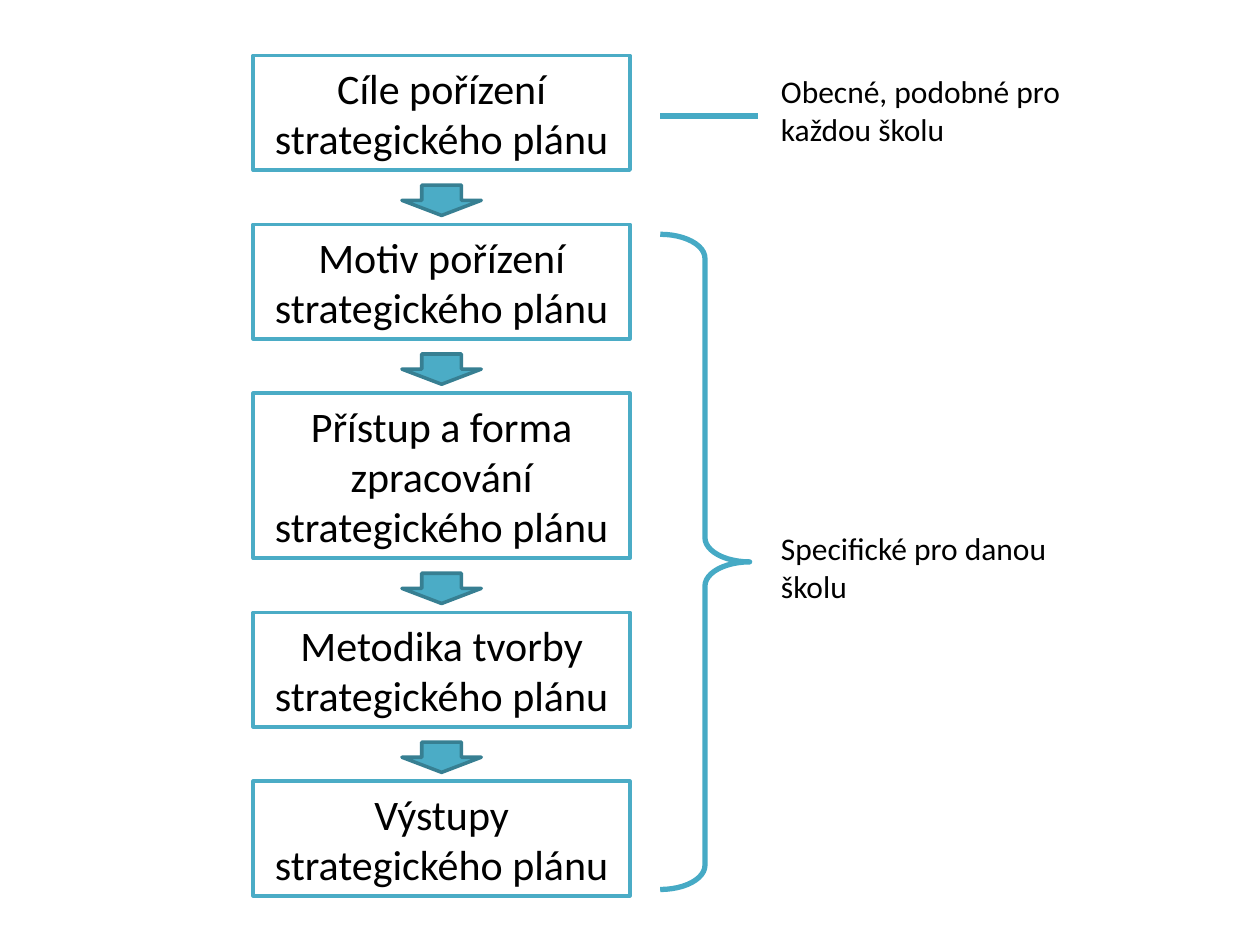
from dataclasses import dataclass

from lxml.etree import SubElement
from pptx import Presentation
from pptx.dml.color import RGBColor
from pptx.enum.shapes import MSO_CONNECTOR as Connector, MSO_SHAPE as Preset
from pptx.enum.text import MSO_ANCHOR as Anchor, MSO_AUTO_SIZE as AutoSize, PP_ALIGN as Align
from pptx.oxml.ns import qn
from pptx.util import Inches, Pt


@dataclass(frozen=True)
class Theme:
    font: str = "Calibri"
    text: RGBColor = RGBColor(0x00, 0x00, 0x00)
    box_fill: RGBColor = RGBColor(0xFF, 0xFF, 0xFF)
    accent: RGBColor = RGBColor(0x4B, 0xAC, 0xC6)
    arrow_edge: RGBColor = RGBColor(0x37, 0x7F, 0x92)
    marker: RGBColor = RGBColor(0x46, 0xAA, 0xC5)
    step_size: int = 24
    note_size: int = 18
    edge_width: int = 2
    marker_width: int = 3


@dataclass(frozen=True)
class Step:
    text: str
    height: float = 0.91


@dataclass(frozen=True)
class Note:
    text: str
    top: float


THEME = Theme()
STEPS = [
    Step("Cíle pořízení strategického plánu"),
    Step("Motiv pořízení strategického plánu"),
    Step("Přístup a forma zpracování strategického plánu", height=1.31),
    Step("Metodika tvorby strategického plánu"),
    Step("Výstupy strategického plánu"),
]
NOTES = [
    Note("Obecné, podobné pro každou školu", 0.52),
    Note("Specifické pro danou školu", 4.15),
]

# Layout in inches
STEP_LEFT, STEP_TOP, STEP_WIDTH, STEP_GAP = 2.01, 0.44, 2.99, 0.43
ARROW_WIDTH, ARROW_HEIGHT, ARROW_OFFSET = 0.63, 0.24, 0.12
MARKER_LEFT = 5.24
NOTE_LEFT, NOTE_WIDTH, NOTE_HEIGHT = 6.1, 2.44, 0.71


def write_text(shape, text: str, *, size: int, align: Align = Align.LEFT,
               anchor: Anchor = Anchor.TOP) -> None:
    frame = shape.text_frame
    frame.word_wrap = True
    frame.auto_size = AutoSize.SHAPE_TO_FIT_TEXT
    frame.vertical_anchor = anchor
    paragraph = frame.paragraphs[0]
    paragraph.alignment = align
    run = paragraph.add_run()
    run.text = text
    run.font.name = THEME.font
    run.font.size = Pt(size)
    run.font.color.rgb = THEME.text


def add_preset(slide, preset: Preset, left: float, top: float, width: float, height: float, *,
               line: RGBColor, line_width: int, fill: RGBColor | None = None):
    shape = slide.shapes.add_shape(preset, Inches(left), Inches(top), Inches(width), Inches(height))
    shape.shadow.inherit = False
    if fill is None:
        shape.fill.background()
    else:
        shape.fill.solid()
        shape.fill.fore_color.rgb = fill
    shape.line.color.rgb = line
    shape.line.width = Pt(line_width)
    return shape


def draw_steps(slide, steps: list[Step]) -> None:
    top = STEP_TOP
    arrow_left = STEP_LEFT + (STEP_WIDTH - ARROW_WIDTH) / 2
    for index, step in enumerate(steps):
        if index:
            add_preset(slide, Preset.DOWN_ARROW, arrow_left, top - STEP_GAP + ARROW_OFFSET,
                       ARROW_WIDTH, ARROW_HEIGHT, fill=THEME.accent,
                       line=THEME.arrow_edge, line_width=THEME.edge_width)
        box = add_preset(slide, Preset.RECTANGLE, STEP_LEFT, top, STEP_WIDTH, step.height,
                         fill=THEME.box_fill, line=THEME.accent, line_width=THEME.edge_width)
        write_text(box, step.text, size=THEME.step_size, align=Align.CENTER, anchor=Anchor.MIDDLE)
        top += step.height + STEP_GAP


def draw_note(slide, note: Note) -> None:
    box = slide.shapes.add_textbox(Inches(NOTE_LEFT), Inches(note.top),
                                   Inches(NOTE_WIDTH), Inches(NOTE_HEIGHT))
    write_text(box, note.text, size=THEME.note_size)


def draw_markers(slide) -> None:
    brace = add_preset(slide, Preset.RIGHT_BRACE, MARKER_LEFT, 1.86, 0.71, 5.2,
                       line=THEME.marker, line_width=THEME.marker_width)
    brace.adjustments[0] = 0.27
    brace.adjustments[1] = 0.5

    line = slide.shapes.add_connector(Connector.STRAIGHT, Inches(MARKER_LEFT), Inches(0.92),
                                      Inches(6.02), Inches(0.92))
    line.line.color.rgb = THEME.marker
    line.line.width = Pt(THEME.marker_width)
    SubElement(line._element.spPr, qn("a:effectLst"))


def main() -> None:
    presentation = Presentation()
    presentation.slide_width = Inches(10)
    presentation.slide_height = Inches(7.5)
    slide = presentation.slides.add_slide(presentation.slide_layouts[6])

    # Steps of the plan, joined by block arrows
    draw_steps(slide, STEPS)
    # Remarks on the right and the marks that lead to them
    for note in NOTES:
        draw_note(slide, note)
    draw_markers(slide)

    presentation.save("out.pptx")


if __name__ == "__main__":
    main()
